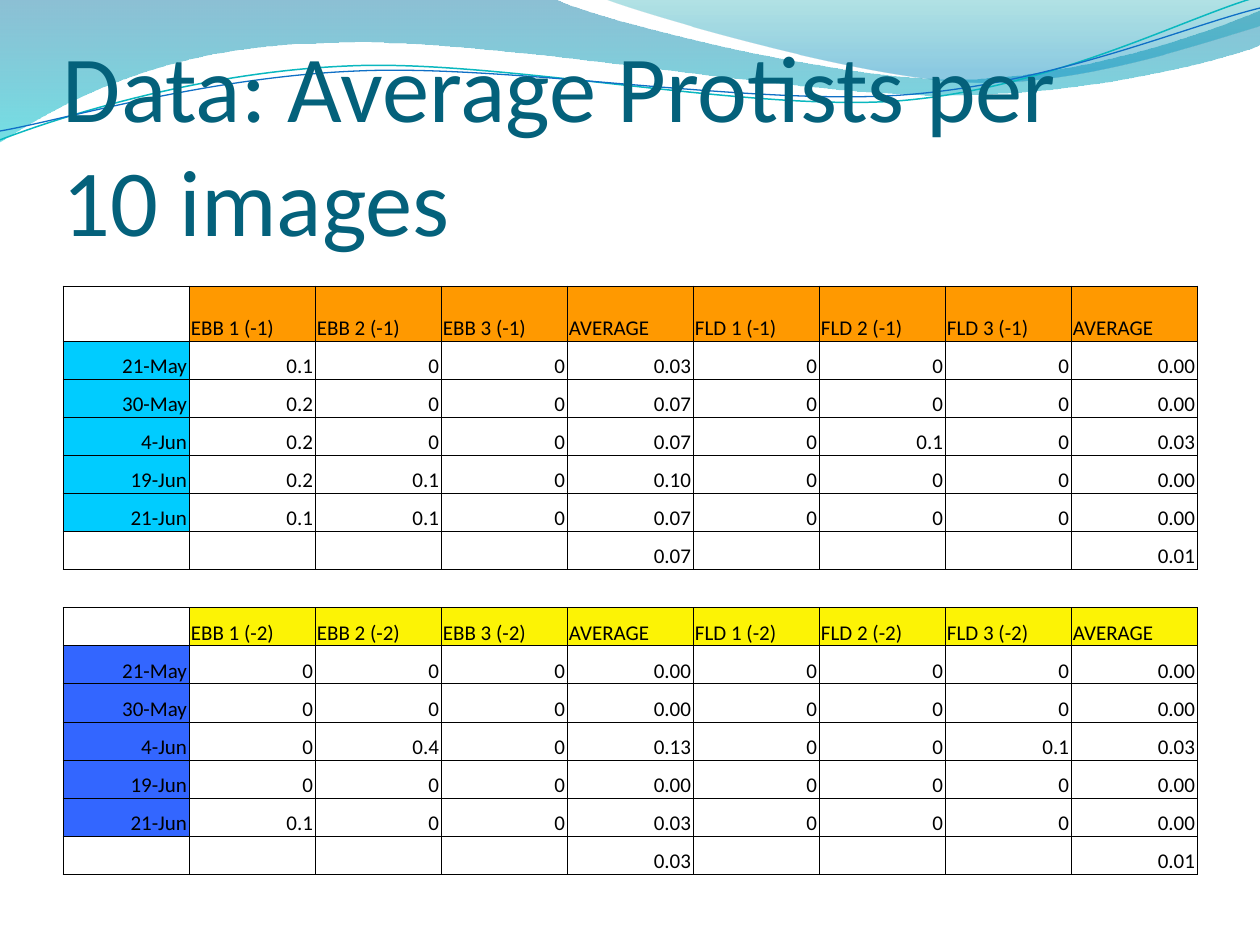
import math
from dataclasses import dataclass

from lxml import etree
from pptx import Presentation
from pptx.dml.color import RGBColor
from pptx.enum.text import MSO_ANCHOR, PP_ALIGN
from pptx.oxml.ns import qn
from pptx.util import Emu, Pt

BOTTOM = MSO_ANCHOR.BOTTOM
LEFT, RIGHT = PP_ALIGN.LEFT, PP_ALIGN.RIGHT
SCALE = 914400 / 126
FONT = "Calibri"


def px(n: float) -> Emu:
    return Emu(round(n * SCALE))


def rgb(value: str) -> RGBColor:
    return RGBColor.from_string(value)


@dataclass
class Stop:
    position: int
    color: str
    opacity: int


@dataclass
class Wave:
    """Steps hold x, y for a straight line, or three x, y pairs for a curve."""
    start: tuple[int, int]
    steps: list[tuple[int, ...]]
    stops: tuple[Stop, ...] = ()
    line: str = ""
    width: float = 0
    tilt: float = 0
    center: tuple[int, int] = (0, 0)


@dataclass
class Block:
    depth: int
    header_fill: str
    date_fill: str
    rows: list[str]
    ebb_mean: str
    fld_mean: str


WAVES = [
    Wave((0, 0), [(554, -1), (600, 21, 837, 79, 955, 79),
                  (1075, 79, 1207, 33, 1260, 11), (1261, 45),
                  (1239, 55, 1096, 96, 940, 95), (784, 95, 481, 35, 324, 43),
                  (163, 45, 58, 105, -1, 142)],
         stops=(Stop(0, "0074A1", 45), Stop(100, "00C6CF", 55))),
    Wave((604, -1), [(641, 14, 859, 78, 969, 82),
                     (1079, 87, 1211, 40, 1260, 26), (1260, 0)],
         stops=(Stop(0, "00A1A9", 30), Stop(80, "008BBF", 45))),
    Wave((0, 140), [(60, 117, 199, 72, 349, 66), (498, 59, 747, 112, 898, 101),
                    (1050, 89, 1182, 19, 1257, -3)],
         line="0AB8BF", width=0.85, tilt=-2.7, center=(629, 72)),
    Wave((0, 131), [(59, 121, 207, 77, 357, 71), (508, 64, 752, 106, 903, 95),
                    (1053, 84, 1186, 26, 1260, 8)],
         line="0F6FC6", width=0.75, tilt=-2.7, center=(629, 74)),
]

BLOCKS = [
    Block(-1, "FF9900", "00CCFF", [
        "21-May 0.1 0 0 0.03 0 0 0 0.00",
        "30-May 0.2 0 0 0.07 0 0 0 0.00",
        "4-Jun 0.2 0 0 0.07 0 0.1 0 0.03",
        "19-Jun 0.2 0.1 0 0.10 0 0 0 0.00",
        "21-Jun 0.1 0.1 0 0.07 0 0 0 0.00"], "0.07", "0.01"),
    Block(-2, "FCF305", "3366FF", [
        "21-May 0 0 0 0.00 0 0 0 0.00",
        "30-May 0 0 0 0.00 0 0 0 0.00",
        "4-Jun 0 0.4 0 0.13 0 0 0.1 0.03",
        "19-Jun 0 0 0 0.00 0 0 0 0.00",
        "21-Jun 0.1 0 0 0.03 0 0 0 0.00"], "0.03", "0.01"),
]
COLUMNS, BLOCK_ROWS = 9, 7


def write(tf, text: str, *, size: float, color: str = "000000", align=LEFT) -> None:
    p = tf.paragraphs[0]
    p.alignment = align
    if text:
        r = p.add_run()
        r.text = text
        r.font.size, r.font.name = Pt(size), FONT
        r.font.color.rgb = rgb(color)
    else:  # an empty cell keeps its row low only with a small font
        etree.SubElement(p._p, qn("a:endParaRPr"), sz=str(size * 100))


def untilted(wave: Wave, x: int, y: int) -> tuple[Emu, Emu]:
    """Turn a point back, so that the rotation of the shape restores it."""
    cx, cy = wave.center
    cos, sin = math.cos(math.radians(-wave.tilt)), math.sin(math.radians(-wave.tilt))
    dx, dy = x - cx, y - cy
    return px(cx + dx * cos - dy * sin), px(cy + dx * sin + dy * cos)


def bend(sp, wave: Wave) -> None:
    """Join the three line points of each curve into one Bézier segment."""
    lines = iter(list(sp.element.iter(qn("a:lnTo"))))
    for step in wave.steps:
        first = next(lines)
        if len(step) == 6:
            first.tag = qn("a:cubicBezTo")
            for _ in range(2):
                extra = next(lines)
                first.append(extra[0])
                extra.getparent().remove(extra)


def draw_wave(shapes, wave: Wave) -> None:
    points = [untilted(wave, *step[i:i + 2])
              for step in wave.steps for i in range(0, len(step), 2)]
    builder = shapes.build_freeform(*untilted(wave, *wave.start))
    builder.add_line_segments(points, close=bool(wave.stops))
    sp = builder.convert_to_shape()
    bend(sp, wave)
    sp.rotation = wave.tilt
    sp.shadow.inherit = False
    if wave.line:
        sp.fill.background()
        sp.line.color.rgb = rgb(wave.line)
        sp.line.width = Pt(wave.width)
        return
    sp.line.fill.background()
    sp.fill.gradient()
    sp.fill.gradient_angle = 270
    for stop, target in zip(wave.stops, sp.fill.gradient_stops):
        target.color.rgb = rgb(stop.color)
    for stop, gs in zip(wave.stops, sp.element.iter(qn("a:gs"))):
        gs.set("pos", str(stop.position * 1000))
        etree.SubElement(gs[0], qn("a:alpha"), val=str(stop.opacity * 1000))


def format_cell(cell, text: str = "", *, fill: str = "", align=RIGHT,
                sides: str = "LRTB") -> None:
    cell.margin_left = cell.margin_right = px(2)
    cell.margin_top, cell.margin_bottom = px(2), 0
    cell.vertical_anchor = BOTTOM
    write(cell.text_frame, text, size=12, align=align)
    tc_pr = cell._tc.get_or_add_tcPr()
    for side in "LRTB":
        ln = etree.SubElement(tc_pr, qn(f"a:ln{side}"), w=str(Pt(0.5)))
        if side in sides:
            solid = etree.SubElement(ln, qn("a:solidFill"))
            etree.SubElement(solid, qn("a:srgbClr"), val="000000")
        else:
            etree.SubElement(ln, qn("a:noFill"))
    if fill:
        cell.fill.solid()
        cell.fill.fore_color.rgb = rgb(fill)
    else:
        cell.fill.background()


def fill_block(table, top: int, block: Block) -> None:
    heads = [head for site in ("EBB", "FLD")
             for head in (*(f"{site} {n} ({block.depth})" for n in (1, 2, 3)), "AVERAGE")]
    means = ["", "", "", "", block.ebb_mean, "", "", "", block.fld_mean]
    rows = [["", *heads], *(row.split() for row in block.rows), means]
    for i, row in enumerate(rows):
        for col, text in enumerate(row):
            fill = ""
            if text and i == 0:
                fill = block.header_fill
            elif text and col == 0:
                fill = block.date_fill
            format_cell(table.cell(top + i, col), text, fill=fill,
                        align=RIGHT if i else LEFT)


def main() -> None:
    prs = Presentation()
    prs.slide_width, prs.slide_height = px(1260), px(945)
    s = prs.slides.add_slide(prs.slide_layouts[6])

    # Wave decoration
    for wave in WAVES:
        draw_wave(s.shapes, wave)

    # Title: the right inset wraps it after "per"
    tf = s.shapes.add_textbox(px(63), px(97), px(1134), px(158)).text_frame
    tf.word_wrap = True
    tf.vertical_anchor = BOTTOM
    tf.margin_left = tf.margin_bottom = 0
    tf.margin_right = px(80)
    write(tf, "Data: Average Protists per 10 images", size=54, color="04617B")

    # Table: two blocks with an open row between them
    heights = [55] + [38.1] * (2 * BLOCK_ROWS)
    table = s.shapes.add_table(len(heights), COLUMNS, px(63), px(286),
                               px(1134), px(sum(heights))).table
    table.first_row = table.horz_banding = False
    for row, height in zip(table.rows, heights):
        row.height = px(height)
    for i, block in enumerate(BLOCKS):
        fill_block(table, i * (BLOCK_ROWS + 1), block)
    for col in range(COLUMNS):
        format_cell(table.cell(BLOCK_ROWS, col), sides="TB")

    prs.save("out.pptx")


if __name__ == "__main__":
    main()
